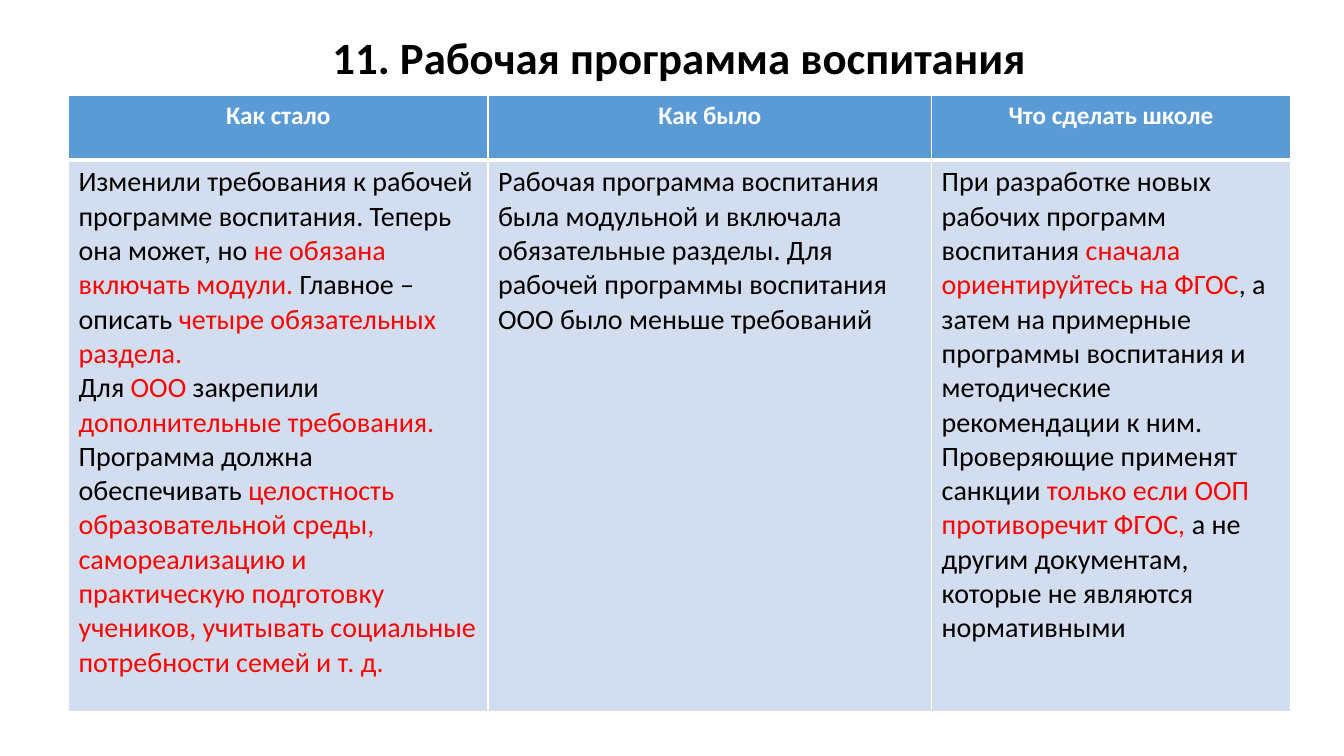
"""Build a slide that compares the old and new rules for the upbringing programme."""
from dataclasses import dataclass

from lxml import etree
from pptx import Presentation
from pptx.dml.color import RGBColor
from pptx.enum.text import MSO_ANCHOR, PP_ALIGN
from pptx.oxml.ns import qn
from pptx.slide import Slide
from pptx.table import _Cell
from pptx.text.text import _Paragraph
from pptx.util import Inches, Pt

CENTER, LEFT = PP_ALIGN.CENTER, PP_ALIGN.LEFT
MIDDLE = MSO_ANCHOR.MIDDLE


@dataclass(frozen=True)
class Theme:
    """Hold the colours, font and type sizes."""
    font: str = "Calibri"
    ink: str = "000000"
    red: str = "FF0000"
    white: str = "FFFFFF"
    head: str = "5B9BD5"
    body: str = "D2DEEF"
    title_size: int = 32
    head_size: int = 18
    body_size: int = 20
    thin: int = 1
    thick: int = 3


THEME = Theme()


@dataclass(frozen=True)
class Part:
    """Hold a piece of text and its colour."""
    text: str
    color: str = THEME.ink


@dataclass(frozen=True)
class Column:
    """Hold a table column: its heading, width and paragraphs."""
    head: str
    width: float
    paras: list[list[Part]]


def red(text: str) -> Part:
    """Return a highlighted piece of text."""
    return Part(text, THEME.red)


TITLE = "11. Рабочая программа воспитания"
ROWS = (0.64, 5.47)
COLUMNS = [
    Column("Как стало", 4.16, [
        [Part("Изменили требования к рабочей программе воспитания. Теперь она может, но "),
         red("не обязана включать модули. "),
         Part("Главное – описать "),
         red("четыре обязательных раздела.")],
        [Part("Для "), red("ООО"), Part(" закрепили "),
         red("дополнительные требования. "),
         Part("Программа должна обеспечивать "),
         red("целостность образовательной среды, самореализацию и практическую подготовку "
             "учеников, учитывать социальные потребности семей и т. д.")],
    ]),
    Column("Как было", 4.4, [
        [Part("Рабочая программа воспитания была модульной и включала обязательные разделы. "
              "Для рабочей программы воспитания ООО было меньше требований")],
    ]),
    Column("Что сделать школе", 3.56, [
        [Part("При разработке новых рабочих программ воспитания "),
         red("сначала ориентируйтесь на ФГОС"),
         Part(", а затем на примерные программы воспитания и методические рекомендации к ним. "
              "Проверяющие применят санкции "),
         red("только если ООП противоречит ФГОС, "),
         Part("а не другим документам, которые не являются нормативными")],
    ]),
]


def write(para: _Paragraph, parts: list[Part], size: int, bold: bool, align: PP_ALIGN) -> None:
    """Fill a paragraph with coloured parts in one type style."""
    para.alignment = align
    para.font.name = THEME.font
    para.font.size = Pt(size)
    para.font.bold = bold
    for part in parts:
        run = para.add_run()
        run.text = part.text
        run.font.color.rgb = RGBColor.from_string(part.color)


def style(cell: _Cell, fill: str, top: int, bottom: int) -> None:
    """Give a cell white borders and a solid fill."""
    props = cell._tc.get_or_add_tcPr()
    edges = {"lnL": THEME.thin, "lnR": THEME.thin, "lnT": top, "lnB": bottom}
    for tag, width in edges.items():
        line = etree.SubElement(props, qn(f"a:{tag}"), w=str(Pt(width)))
        solid = etree.SubElement(line, qn("a:solidFill"))
        etree.SubElement(solid, qn("a:srgbClr"), val=THEME.white)
    cell.fill.solid()
    cell.fill.fore_color.rgb = RGBColor.from_string(fill)


def add_title(slide: Slide) -> None:
    """Add the slide title."""
    box = slide.shapes.add_textbox(Inches(0.99), Inches(0.08), Inches(11.5), Inches(1.04))
    frame = box.text_frame
    frame.word_wrap = True
    frame.vertical_anchor = MIDDLE
    para = frame.paragraphs[0]
    para.line_spacing = 0.9
    write(para, [Part(TITLE)], THEME.title_size, True, CENTER)


def add_grid(slide: Slide) -> None:
    """Add the comparison table."""
    width = sum(column.width for column in COLUMNS)
    table = slide.shapes.add_table(
        len(ROWS), len(COLUMNS), Inches(0.68), Inches(0.95), Inches(width), Inches(sum(ROWS))
    ).table
    for row, height in zip(table.rows, ROWS):
        row.height = Inches(height)
    for index, column in enumerate(COLUMNS):
        table.columns[index].width = Inches(column.width)
        head, body = table.cell(0, index), table.cell(1, index)
        style(head, THEME.head, THEME.thin, THEME.thick)
        style(body, THEME.body, THEME.thick, THEME.thin)
        label = [Part(column.head, THEME.white)]
        write(head.text_frame.paragraphs[0], label, THEME.head_size, True, CENTER)
        frame = body.text_frame
        for order, parts in enumerate(column.paras):
            para = frame.add_paragraph() if order else frame.paragraphs[0]
            write(para, parts, THEME.body_size, False, LEFT)


def main() -> None:
    """Build and save the slide."""
    deck = Presentation()
    deck.slide_width, deck.slide_height = Inches(13.33), Inches(7.5)
    slide = deck.slides.add_slide(deck.slide_layouts[6])
    add_title(slide)
    add_grid(slide)
    deck.save("out.pptx")


if __name__ == "__main__":
    main()
